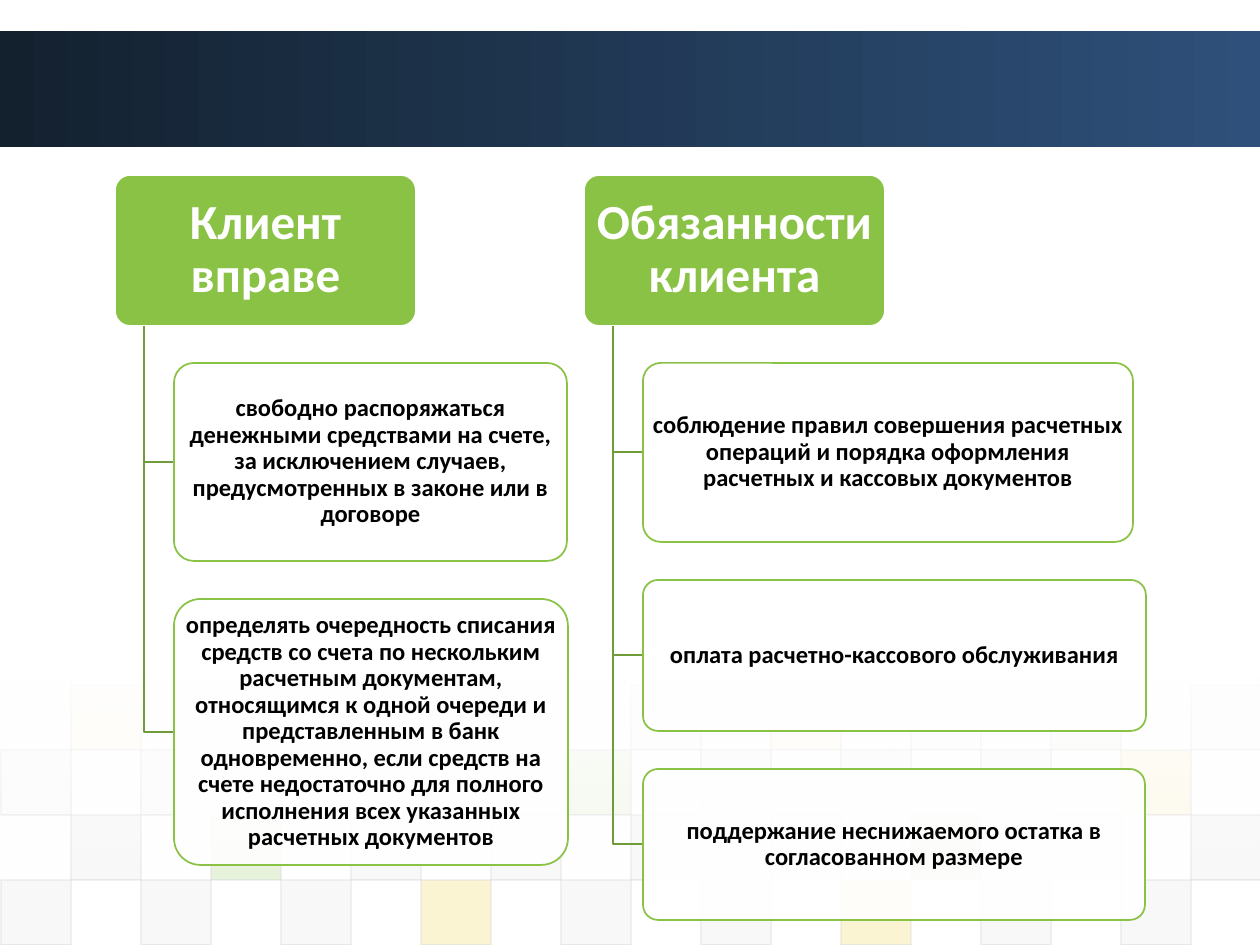
from pptx import Presentation
from pptx import util as u
from pptx.dml import color
from pptx.enum import shapes, text
from pptx.oxml import xmlchemy
from lxml import etree

PX = u.Inches(1) // 126
DRAWING = "{http://schemas.openxmlformats.org/drawingml/2006/main}"


def paint(target, value, opacity=100):
    target.rgb = color.RGBColor.from_string(value)
    if opacity < 100:
        for element in target._xFill.iter(DRAWING + "srgbClr"):
            alpha = etree.SubElement(element, DRAWING + "alpha")
            alpha.set("val", str(opacity * 1000))


def add_box(kind, left, top, width, height):
    shape = slide.shapes.add_shape(kind, left * PX, top * PX, width * PX, height * PX)
    shape.shadow.inherit = False
    return shape


presentation = Presentation()
presentation.slide_width = u.Inches(10)
presentation.slide_height = u.Inches(7.5)
slide = presentation.slides.add_slide(presentation.slide_layouts[6])

RECTANGLE = shapes.MSO_SHAPE.RECTANGLE
ROUNDED = shapes.MSO_SHAPE.ROUNDED_RECTANGLE

banner = add_box(RECTANGLE, 0, 31, 1260, 116)
banner.line.fill.background()
banner.fill.gradient()
banner.fill.gradient_angle = 0
for stop, value in zip(banner.fill.gradient_stops, ("13212F", "2E507A")):
    stop.color.rgb = color.RGBColor.from_string(value)
for stop, position in zip(banner.fill.gradient_stops, (0, 1)):
    stop.position = position

tile_colors = {"D": "DDDDDD", "E": "EAEAEA", "G": "8AC246", "Y": "EFC821"}
tile_rows = [
    ("YEEYDYEGE", 1, 5),
    ("DDDDGDDDY", 0, 10),
    ("DGDDDDGDD", 1, 20),
    ("DDDYDDYDD", 0, 20),
]
for row, (letters, first_column, opacity) in enumerate(tile_rows):
    for index, letter in enumerate(letters):
        column = first_column + 2 * index
        tile = add_box(RECTANGLE, 1 + 70 * column, 685 + 65 * row, 70, 65)
        tile.fill.solid()
        paint(tile.fill.fore_color, tile_colors[letter], opacity)
        tile.line.width = u.Pt(0.75)
        tile.line.fill.solid()
        paint(tile.line.fill.fore_color, "DDDDDD", 60)

fade = add_box(RECTANGLE, 0, 677, 1260, 204)
fade.line.fill.background()
fade.fill.gradient()
fade.fill.gradient_angle = 270
for stop, position, opacity in zip(fade.fill.gradient_stops, (0, 1), (90, 0)):
    stop.position = position
    stop.color.rgb = color.RGBColor.from_string("FFFFFF")
    alpha = etree.SubElement(stop._gs.find(DRAWING + "srgbClr"), DRAWING + "alpha")
    alpha.set("val", str(opacity * 1000))

columns = [
    (115, "Клиент вправе", [
        (393, 198, "свободно распоряжаться денежными средствами на счете, за исключением "
                   "случаев, предусмотренных в законе или в договоре"),
        (394, 266, "определять очередность списания средств со счета по нескольким расчетным "
                   "документам, относящимся к одной очереди и представленным в банк "
                   "одновременно, если средств на счете недостаточно для полного исполнения "
                   "всех указанных расчетных документов"),
    ]),
    (584, "Обязанности клиента", [
        (490, 179, "соблюдение правил совершения расчетных операций и порядка оформления "
                   "расчетных и кассовых документов"),
        (503, 151, "оплата расчетно-кассового обслуживания"),
        (502, 151, "поддержание неснижаемого остатка в согласованном размере"),
    ]),
]
HEAD_TOP, HEAD_WIDTH, HEAD_HEIGHT = 175, 301, 151
SPINE_INDENT, ITEM_INDENT, GAP = 29, 59, 38

for left, heading, items in columns:
    cards = [(left, HEAD_TOP, HEAD_WIDTH, HEAD_HEIGHT, heading, True)]
    top = HEAD_TOP + HEAD_HEIGHT + GAP - 1
    for width, height, wording in items:
        cards.append((left + ITEM_INDENT, top, width, height, wording, False))
        top += height + GAP

    for card_left, card_top, width, height, wording, is_heading in cards:
        if not is_heading:
            middle = card_top + height // 2
            spine = left + SPINE_INDENT
            builder = slide.shapes.build_freeform(spine, HEAD_TOP + HEAD_HEIGHT, scale=PX)
            builder.add_line_segments([(spine, middle), (card_left, middle)], close=False)
            branch = builder.convert_to_shape()
            branch.shadow.inherit = False
            branch.fill.background()
            branch.line.width = u.Pt(1)
            paint(branch.line.color, "6F9B38")

        card = add_box(ROUNDED, card_left, card_top, width, height)
        card.adjustments[0] = 0.1
        card.fill.solid()
        paint(card.fill.fore_color, "8AC246" if is_heading else "FFFFFF",
              100 if is_heading else 90)
        card.line.width = u.Pt(1)
        paint(card.line.color, "FFFFFF" if is_heading else "8AC246")

        frame = card.text_frame
        frame.word_wrap = True
        frame.vertical_anchor = text.MSO_ANCHOR.MIDDLE
        frame.margin_left = frame.margin_right = (7 if is_heading else 3) * PX
        frame.margin_top = frame.margin_bottom = (5 if is_heading else 3) * PX
        paragraph = frame.paragraphs[0]
        paragraph.alignment = text.PP_ALIGN.CENTER
        paragraph.line_spacing = 0.9
        run = paragraph.add_run()
        run.text = wording
        run.font.name = "Calibri"
        run.font.size = u.Pt(28 if is_heading else 14)
        run.font.bold = True
        paint(run.font.color, "FFFFFF" if is_heading else "000000")

presentation.save("out.pptx")
